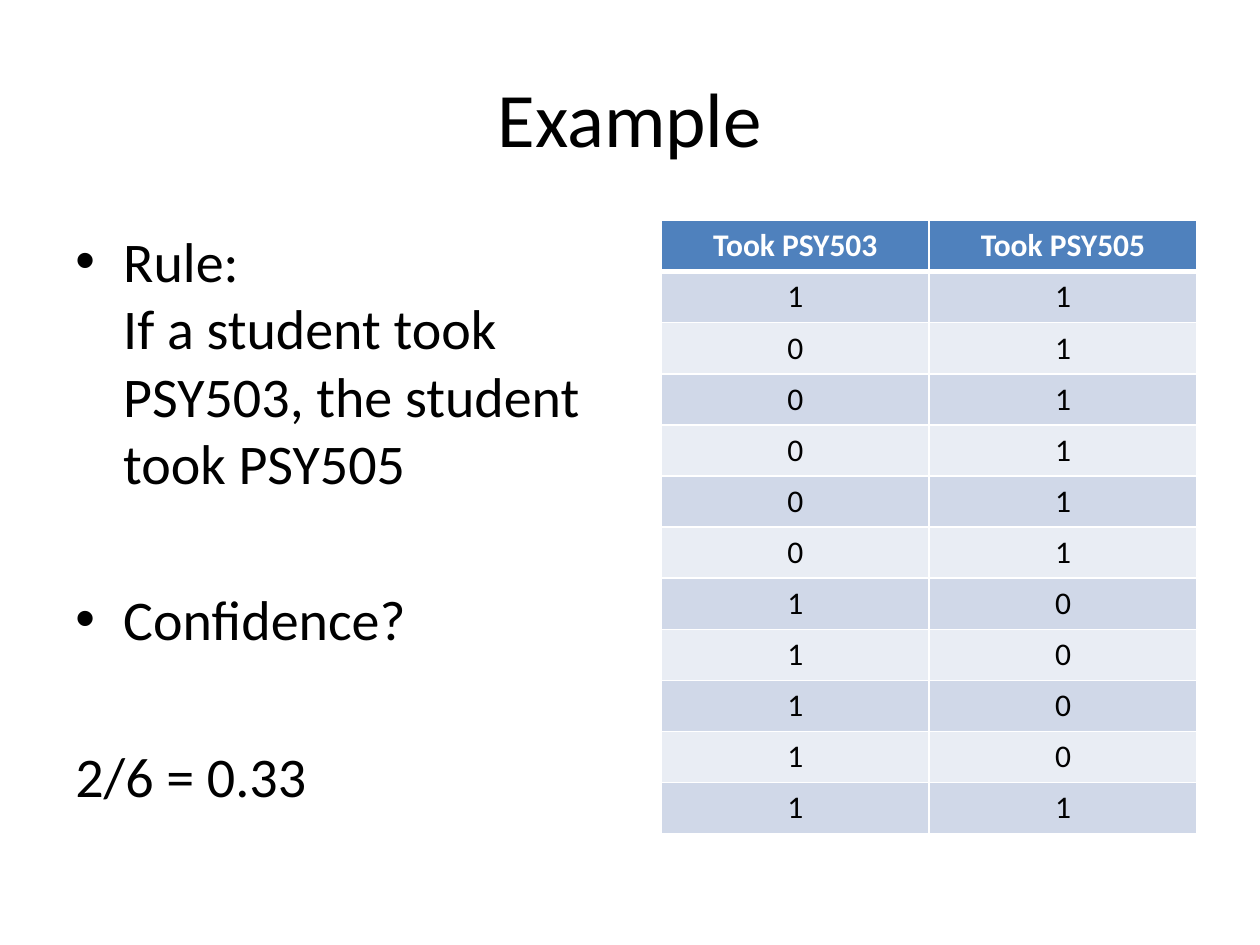
from dataclasses import dataclass

from lxml.etree import SubElement
from pptx import Presentation
from pptx.dml.color import RGBColor
from pptx.enum.text import MSO_ANCHOR, PP_ALIGN
from pptx.oxml.ns import qn
from pptx.util import Inches, Pt


@dataclass(frozen=True)
class Theme:
    font: str = "Calibri"
    text: str = "000000"
    white: str = "FFFFFF"
    header: str = "4F81BD"
    bands: tuple = ("D0D8E8", "E9EDF4")
    title_size: int = 44
    body_size: int = 32
    table_size: int = 18
    section_gap: int = 51


THEME = Theme()

COURSES = ("Took PSY503", "Took PSY505")
STUDENTS = [(1, 1)] + [(0, 1)] * 5 + [(1, 0)] * 4 + [(1, 1)]


def add_run(paragraph, text, size, color=THEME.text, bold=False):
    run = paragraph.add_run()
    run.text = text
    run.font.name = THEME.font
    run.font.size = Pt(size)
    run.font.bold = bold
    run.font.color.rgb = RGBColor.from_string(color)


def add_frame(slide, box, anchor):
    frame = slide.shapes.add_textbox(*map(Inches, box)).text_frame
    frame.word_wrap = True
    frame.vertical_anchor = anchor
    return frame


def add_title(slide, box, text):
    heading = add_frame(slide, box, MSO_ANCHOR.MIDDLE).paragraphs[0]
    heading.alignment = PP_ALIGN.CENTER
    add_run(heading, text, THEME.title_size)


def set_bullet(paragraph):
    """Give the paragraph a round bullet with a hanging indent."""
    properties = paragraph._p.get_or_add_pPr()
    properties.set("marL", str(Inches(0.38)))
    properties.set("indent", str(-Inches(0.38)))
    SubElement(properties, qn("a:buFont"), typeface="Arial")
    SubElement(properties, qn("a:buChar"), char="•")


def add_rule(slide, box, sections):
    """Write each section, given as (lines, bulleted), as one paragraph."""
    frame = add_frame(slide, box, MSO_ANCHOR.TOP)
    for index, (lines, bulleted) in enumerate(sections):
        paragraph = frame.add_paragraph() if index else frame.paragraphs[0]
        if index:
            paragraph.space_before = Pt(THEME.section_gap)
        if bulleted:
            set_bullet(paragraph)
        for number, line in enumerate(lines):
            if number:
                paragraph.add_line_break()
            add_run(paragraph, line, THEME.body_size)


def set_borders(cell, widths):
    """Draw white borders; widths maps a side (L, R, T, B) to points."""
    properties = cell._tc.get_or_add_tcPr()
    for position, (side, width) in enumerate(widths.items()):
        line = properties.makeelement(qn(f"a:ln{side}"), {"w": str(Pt(width))})
        fill = SubElement(line, qn("a:solidFill"))
        SubElement(fill, qn("a:srgbClr"), val=THEME.white)
        properties.insert(position, line)


def add_course_table(slide, box, header, records):
    rows = [header, *records]
    table = slide.shapes.add_table(len(rows), len(header), *map(Inches, box)).table
    for row_index, values in enumerate(rows):
        is_header = row_index == 0
        fill = THEME.header if is_header else THEME.bands[(row_index - 1) % 2]
        color = THEME.white if is_header else THEME.text
        top = 3 if row_index == 1 else 1
        bottom = 3 if is_header else 1
        for column_index, value in enumerate(values):
            cell = table.cell(row_index, column_index)
            cell.fill.solid()
            cell.fill.fore_color.rgb = RGBColor.from_string(fill)
            set_borders(cell, {"L": 1, "R": 1, "T": top, "B": bottom})
            paragraph = cell.text_frame.paragraphs[0]
            paragraph.alignment = PP_ALIGN.CENTER
            add_run(paragraph, str(value), THEME.table_size, color, is_header)


def main():
    presentation = Presentation()
    presentation.slide_width = Inches(10)
    presentation.slide_height = Inches(7.5)
    slide = presentation.slides.add_slide(presentation.slide_layouts[6])

    add_title(slide, (0.5, 0.3, 9, 1.25), "Example")
    add_course_table(slide, (5.25, 1.75, 4.25, 4.87), COURSES, STUDENTS)
    add_rule(slide, (0.5, 1.75, 4.33, 4.95), [
        (("Rule:", "If a student took PSY503, the student took PSY505"), True),
        (("Confidence?",), True),
        (("2/6 = 0.33",), False),
    ])
    presentation.save("out.pptx")


if __name__ == "__main__":
    main()
